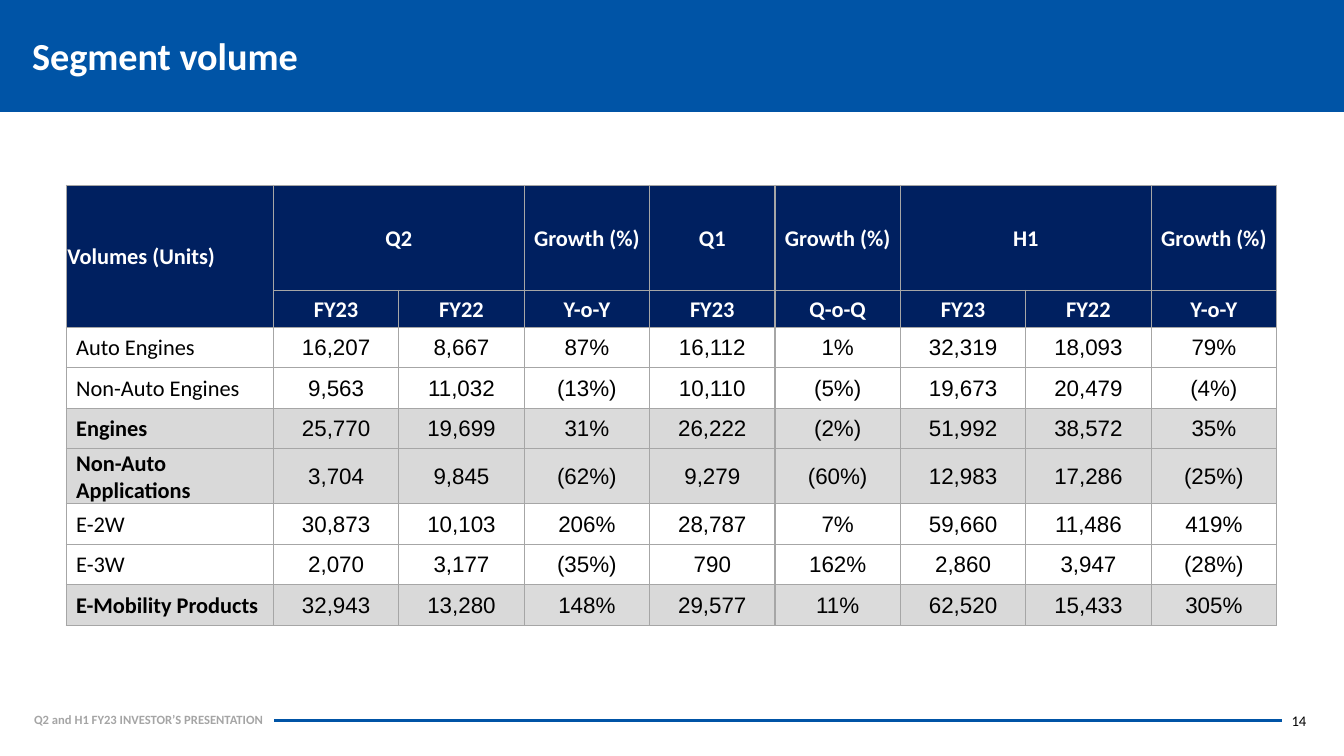
from lxml import etree
from pptx import Presentation
from pptx.dml.color import RGBColor
from pptx.enum.shapes import MSO_CONNECTOR, MSO_SHAPE
from pptx.enum.text import MSO_ANCHOR, PP_ALIGN
from pptx.oxml import parse_xml
from pptx.oxml.ns import nsdecls, qn
from pptx.util import Cm, Pt

BLUE = RGBColor(0x00, 0x54, 0xA6)
NAVY = RGBColor(0x00, 0x20, 0x60)
WHITE = RGBColor(0xFF, 0xFF, 0xFF)
BLACK = RGBColor(0x00, 0x00, 0x00)
FOOTER_GREY = RGBColor(0xA5, 0xA5, 0xA5)
BORDER_GREY = RGBColor(0xA6, 0xA6, 0xA6)
TOTAL_GREY = RGBColor(0xD9, 0xD9, 0xD9)
GROWTH_GREY = RGBColor(0xDB, 0xDB, 0xDB)
LEFT, CENTER, RIGHT = PP_ALIGN.LEFT, PP_ALIGN.CENTER, PP_ALIGN.RIGHT
TOP, MIDDLE = MSO_ANCHOR.TOP, MSO_ANCHOR.MIDDLE

HEADER = [
    ["Volumes (Units)", "Q2", "", "Growth (%)", "Q1", "Growth (%)", "H1", "", "Growth (%)"],
    ["", "FY23", "FY22", "Y-o-Y", "FY23", "Q-o-Q", "FY23", "FY22", "Y-o-Y"],
]
VOLUMES = [
    ["Auto Engines", "16,207", "8,667", "87%", "16,112", "1%", "32,319", "18,093", "79%"],
    ["Non-Auto Engines", "9,563", "11,032", "(13%)", "10,110", "(5%)", "19,673", "20,479", "(4%)"],
    ["Engines", "25,770", "19,699", "31%", "26,222", "(2%)", "51,992", "38,572", "35%"],
    ["Non-Auto Applications", "3,704", "9,845", "(62%)", "9,279", "(60%)", "12,983", "17,286", "(25%)"],
    ["E-2W", "30,873", "10,103", "206%", "28,787", "7%", "59,660", "11,486", "419%"],
    ["E-3W", "2,070", "3,177", "(35%)", "790", "162%", "2,860", "3,947", "(28%)"],
    ["E-Mobility Products", "32,943", "13,280", "148%", "29,577", "11%", "62,520", "15,433", "305%"],
]
TOTALS = {"Engines", "Non-Auto Applications", "E-Mobility Products"}
GROWTH_COLUMNS = {3, 5, 8}


def style(paragraph, size, color, bold=False, align=LEFT, font_name="Calibri"):
    """Set the alignment and font of a whole paragraph."""
    paragraph.alignment = align
    font = paragraph.font
    font.name, font.size, font.bold = font_name, Pt(size), bold
    font.color.rgb = color


def add_border(cell):
    for side in ("lnL", "lnR", "lnT", "lnB"):
        cell._tc.get_or_add_tcPr().append(parse_xml(
            f'<a:{side} {nsdecls("a")} w="12700"><a:solidFill>'
            f'<a:srgbClr val="{BORDER_GREY}"/></a:solidFill></a:{side}>'))


prs = Presentation()
prs.slide_width, prs.slide_height = Cm(33.87), Cm(19.05)
slide = prs.slides.add_slide(prs.slide_layouts[6])

title_band = slide.shapes.add_shape(MSO_SHAPE.RECTANGLE, 0, 0, prs.slide_width, Cm(2.82))
title_band.shadow.inherit = False
title_band.fill.solid()
title_band.fill.fore_color.rgb = BLUE
title_band.line.fill.background()

footer_rule = slide.shapes.add_connector(
    MSO_CONNECTOR.STRAIGHT, Cm(6.91), Cm(18.16), Cm(32.31), Cm(18.16))
footer_rule.line.color.rgb = BLUE
footer_rule.line.width = Pt(2.25)
etree.SubElement(footer_rule._element.spPr, qn("a:effectLst"))

for text, left, top, width, height, size, color, bold, align, anchor in [
    ("Q2 and H1 FY23 INVESTOR’S PRESENTATION", 0.61, 17.81, 8.97, 0.64, 9, FOOTER_GREY, True, LEFT, TOP),
    ("14", 27.1, 17.81, 6.07, 0.71, 10.5, BLACK, False, RIGHT, TOP),
    ("Segment volume", 0.56, 0.38, 27.64, 2.18, 27.3, WHITE, True, LEFT, MIDDLE),
]:
    frame = slide.shapes.add_textbox(Cm(left), Cm(top), Cm(width), Cm(height)).text_frame
    frame.word_wrap = True
    frame.vertical_anchor = anchor
    frame.text = text
    style(frame.paragraphs[0], size, color, bold, align)
    if anchor == MIDDLE:
        frame.paragraphs[0].line_spacing = 0.9

rows = HEADER + VOLUMES
row_heights = [2.65, 0.93] + [1.02] * len(VOLUMES)
column_widths = [5.22] + [3.16] * 8
table = slide.shapes.add_table(
    len(rows), len(column_widths), Cm(1.67), Cm(4.67),
    Cm(sum(column_widths)), Cm(sum(row_heights))).table
for column, width in zip(table.columns, column_widths):
    column.width = Cm(width)
for row, height in zip(table.rows, row_heights):
    row.height = Cm(height)

for r, values in enumerate(rows):
    is_header = r < len(HEADER)
    is_total = values[0] in TOTALS
    for c, value in enumerate(values):
        cell = table.cell(r, c)
        is_label = c == 0
        cell.text = value
        cell.vertical_anchor = MIDDLE
        cell.margin_left = Cm(0.25 if is_label and not is_header else 0.03)
        cell.margin_right = cell.margin_top = Cm(0.03)
        cell.margin_bottom = 0
        style(cell.text_frame.paragraphs[0], 16,
              WHITE if is_header else BLACK,
              is_header or (is_label and is_total),
              LEFT if is_label else CENTER,
              "Calibri" if is_header or is_label else "Arial")
        add_border(cell)
        if is_header or is_total:
            cell.fill.solid()
            total_fill = GROWTH_GREY if c in GROWTH_COLUMNS else TOTAL_GREY
            cell.fill.fore_color.rgb = NAVY if is_header else total_fill
        else:
            cell.fill.background()

table.cell(0, 0).merge(table.cell(1, 0))
for first in (1, 6):
    table.cell(0, first).merge(table.cell(0, first + 1))

prs.save("out.pptx")
